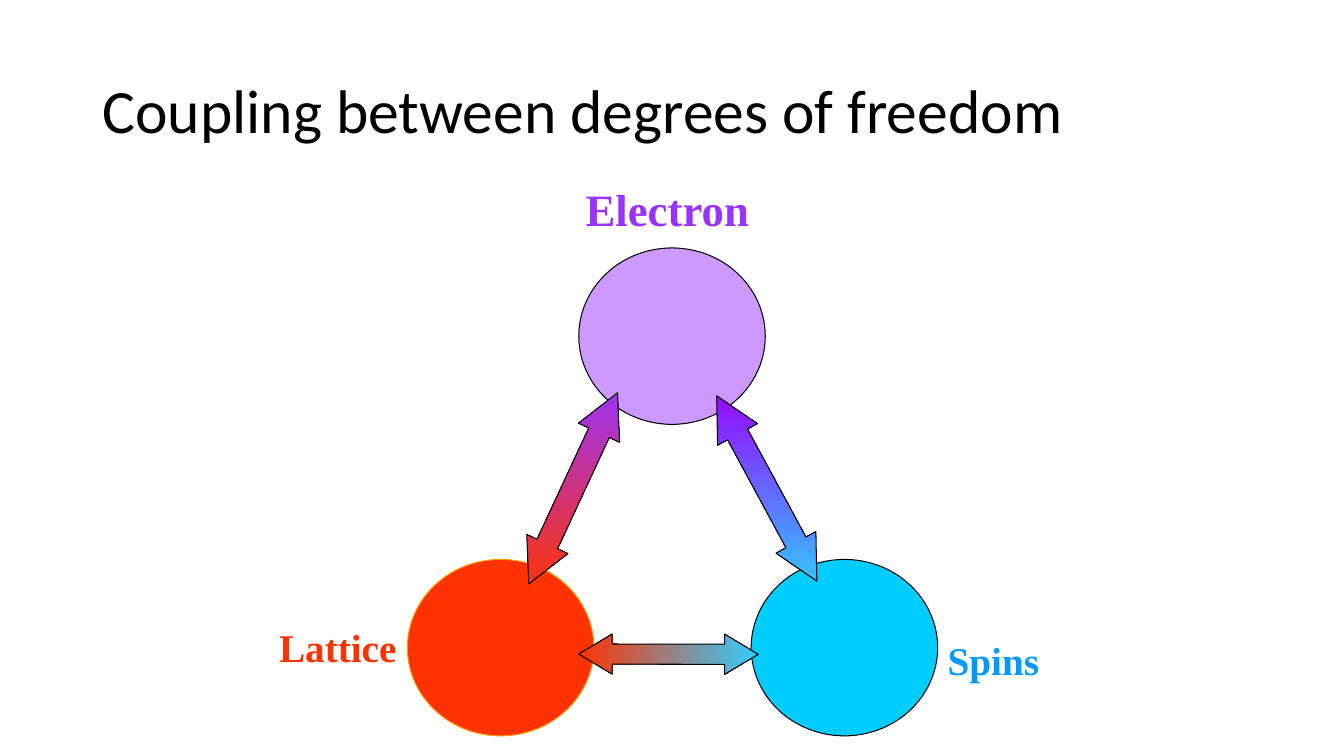
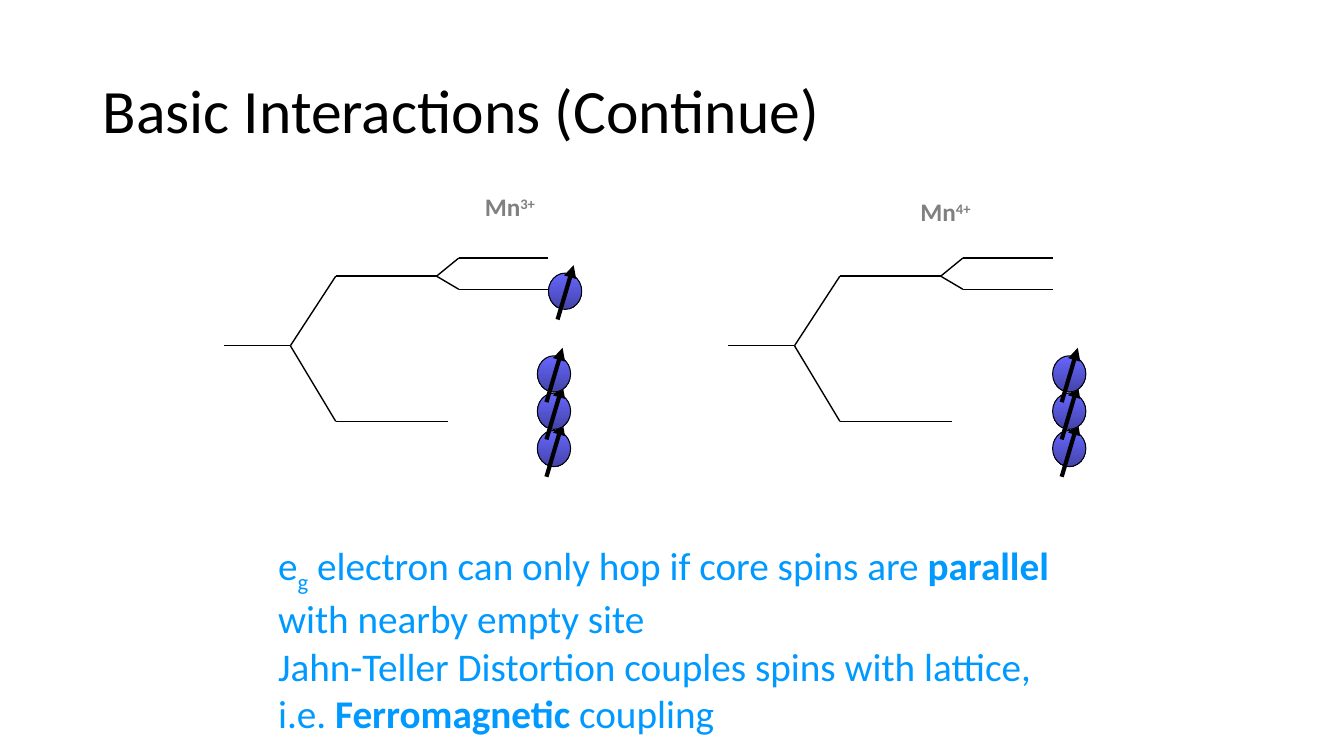
from dataclasses import dataclass

from lxml.etree import SubElement
from pptx import Presentation
from pptx.dml.color import RGBColor
from pptx.enum.shapes import MSO_CONNECTOR, MSO_SHAPE
from pptx.enum.text import MSO_ANCHOR, MSO_AUTO_SIZE
from pptx.oxml.ns import qn
from pptx.shapes.autoshape import Shape
from pptx.slide import Slide
from pptx.text.text import TextFrame
from pptx.util import Emu, Pt

SCALE = 9144
BLACK = RGBColor(0x00, 0x00, 0x00)
GRAY = RGBColor(0x80, 0x80, 0x80)
LILAC = RGBColor(0xCC, 0x99, 0xFF)
PURPLE = RGBColor(0x99, 0x33, 0xFF)
VIOLET = RGBColor(0x99, 0x00, 0xFF)
RED = RGBColor(0xFF, 0x33, 0x00)
ORANGE = RGBColor(0xFF, 0x99, 0x00)
AQUA = RGBColor(0x00, 0xCC, 0xFF)
SKY = RGBColor(0x33, 0xCC, 0xFF)
BLUE = RGBColor(0x00, 0x99, 0xFF)
LIGHT = RGBColor(0x66, 0x66, 0xFF)
DARK = RGBColor(0x44, 0x44, 0xA9)
SANS = "Calibri"
SERIF = "Times New Roman"


@dataclass(frozen=True)
class Box:
    left: int
    top: int
    width: int
    height: int


@dataclass(frozen=True)
class Span:
    text: str
    bold: bool = False
    base: int = 0


@dataclass(frozen=True)
class Style:
    font: str
    size: int
    color: RGBColor


@dataclass(frozen=True)
class Node:
    left: int
    top: int
    fill: RGBColor
    edge: RGBColor


@dataclass(frozen=True)
class Link:
    box: Box
    turn: float
    head: float
    start: RGBColor
    end: RGBColor
    angle: int


@dataclass(frozen=True)
class Label:
    box: Box
    spans: list[Span]
    style: Style


@dataclass(frozen=True)
class Site:
    shift: int
    stack: int
    label: Label


TITLE = Style(SANS, 44, BLACK)
BODY = Style(SANS, 28, BLUE)
ION = Style(SANS, 18, GRAY)

NODES = [
    Node(574, 246, LILAC, BLACK),
    Node(745, 555, AQUA, BLACK),
    Node(404, 555, RED, ORANGE),
]
LINKS = [
    Link(Box(656, 462, 209, 45), 241.6, 0.97, VIOLET, SKY, 270),
    Link(Box(574, 629, 178, 40), 0.1, 0.83, RED, SKY, 0),
    Link(Box(464, 462, 209, 45), 294.9, 0.97, PURPLE, RED, 270),
]
NAMES = [
    Label(Box(930, 626, 111, 57), [Span("Spins", True)], Style(SERIF, 28, BLUE)),
    Label(Box(267, 613, 137, 57), [Span("Lattice", True)], Style(SERIF, 28, RED)),
    Label(Box(571, 175, 184, 64), [Span("Electron", True)], Style(SERIF, 32, PURPLE)),
]
LEVELS = [
    (288, 343, 333, 418),
    (222, 343, 288, 343),
    (288, 343, 333, 274),
    (333, 274, 433, 274),
    (333, 418, 444, 418),
    (433, 274, 455, 256),
    (433, 274, 455, 287),
    (455, 256, 544, 256),
    (455, 287, 544, 287),
]
SITES = [
    Site(0, 533, Label(Box(471, 185, 83, 40), [Span("Mn", True), Span("3+", True, 30)], ION)),
    Site(500, 1044, Label(Box(903, 190, 83, 40), [Span("Mn", True), Span("4+", True, 30)], ION)),
]
NOTES = [
    [
        Span("e"),
        Span("g", base=-25),
        Span(" electron can only hop if core spins are "),
        Span("parallel", True),
        Span(" with nearby empty site"),
    ],
    [
        Span("Jahn-Teller Distortion couples spins with lattice, i.e. "),
        Span("Ferromagnetic", True),
        Span(" coupling"),
    ],
]


def px(count: int) -> Emu:
    return Emu(count * SCALE)


def place(box: Box) -> tuple[Emu, Emu, Emu, Emu]:
    return px(box.left), px(box.top), px(box.width), px(box.height)


def add_text(slide: Slide, box: Box, lines: list[list[Span]], style: Style, wrap: bool = True) -> TextFrame:
    frame = slide.shapes.add_textbox(*place(box)).text_frame
    frame.word_wrap = wrap
    frame.auto_size = MSO_AUTO_SIZE.SHAPE_TO_FIT_TEXT
    for spot, spans in enumerate(lines):
        para = frame.add_paragraph() if spot else frame.paragraphs[0]
        for span in spans:
            run = para.add_run()
            run.text = span.text
            font = run.font
            font.name = style.font
            font.size = Pt(style.size)
            font.color.rgb = style.color
            font.bold = span.bold
            if span.base:
                run._r.get_or_add_rPr().set("baseline", str(span.base * 1000))
    return frame


def add_label(slide: Slide, label: Label) -> None:
    add_text(slide, label.box, [label.spans], label.style, wrap=False)


def add_title(slide: Slide, text: str) -> None:
    frame = add_text(slide, Box(92, 40, 1150, 145), [[Span(text)]], TITLE)
    frame.auto_size = MSO_AUTO_SIZE.NONE
    frame.vertical_anchor = MSO_ANCHOR.MIDDLE
    frame.paragraphs[0].line_spacing = 0.9


def add_form(slide: Slide, kind: MSO_SHAPE, box: Box, edge: RGBColor = BLACK) -> Shape:
    form = slide.shapes.add_shape(kind, *place(box))
    form.shadow.inherit = False
    form.line.color.rgb = edge
    form.line.width = Pt(0.75)
    return form


def blend(form: Shape, start: RGBColor, end: RGBColor, angle: int) -> None:
    form.fill.gradient()
    form.fill.gradient_angle = angle
    for stop, color in zip(form.fill.gradient_stops, (start, end)):
        stop.color.rgb = color
    form._element.spPr.find(qn("a:gradFill")).set("rotWithShape", "0")


def add_node(slide: Slide, node: Node) -> None:
    form = add_form(slide, MSO_SHAPE.OVAL, Box(node.left, node.top, 185, 175), node.edge)
    form.fill.solid()
    form.fill.fore_color.rgb = node.fill


def add_link(slide: Slide, link: Link) -> None:
    form = add_form(slide, MSO_SHAPE.LEFT_RIGHT_ARROW, link.box)
    form.adjustments[0] = 0.5
    form.adjustments[1] = link.head
    form.rotation = link.turn
    blend(form, link.start, link.end, link.angle)


def add_line(slide: Slide, ends: tuple[int, int, int, int], width: int = 1, arrow: bool = False) -> None:
    line = slide.shapes.add_connector(MSO_CONNECTOR.STRAIGHT, *map(px, ends))
    line.line.color.rgb = BLACK
    line.line.width = Pt(width)
    props = line._element.spPr
    if arrow:
        SubElement(props.find(qn("a:ln")), qn("a:tailEnd")).set("type", "triangle")
    SubElement(props, qn("a:effectLst"))


def add_spin(slide: Slide, left: int, top: int) -> None:
    ball = add_form(slide, MSO_SHAPE.OVAL, Box(left, top, 33, 36))
    blend(ball, LIGHT, DARK, 270)
    add_line(slide, (left + 9, top + 46, left + 25, top - 8), 3, True)


def add_site(slide: Slide, site: Site) -> None:
    for row in range(3):
        add_spin(slide, site.stack, 427 - 37 * row)
    for x1, y1, x2, y2 in LEVELS:
        add_line(slide, (x1 + site.shift, y1, x2 + site.shift, y2))
    add_label(slide, site.label)


def main() -> None:
    deck = Presentation()
    deck.slide_width, deck.slide_height = px(1333), px(750)
    blank = deck.slide_layouts[6]

    slide = deck.slides.add_slide(blank)
    add_title(slide, "Coupling between degrees of freedom")
    for node in NODES:
        add_node(slide, node)
    for link in LINKS:
        add_link(slide, link)
    for name in NAMES:
        add_label(slide, name)

    slide = deck.slides.add_slide(blank)
    add_title(slide, "Basic Interactions (Continue)")
    add_text(slide, Box(266, 532, 821, 199), NOTES, BODY)
    for site in SITES:
        add_site(slide, site)
    add_spin(slide, 544, 271)

    deck.save("out.pptx")


if __name__ == "__main__":
    main()
